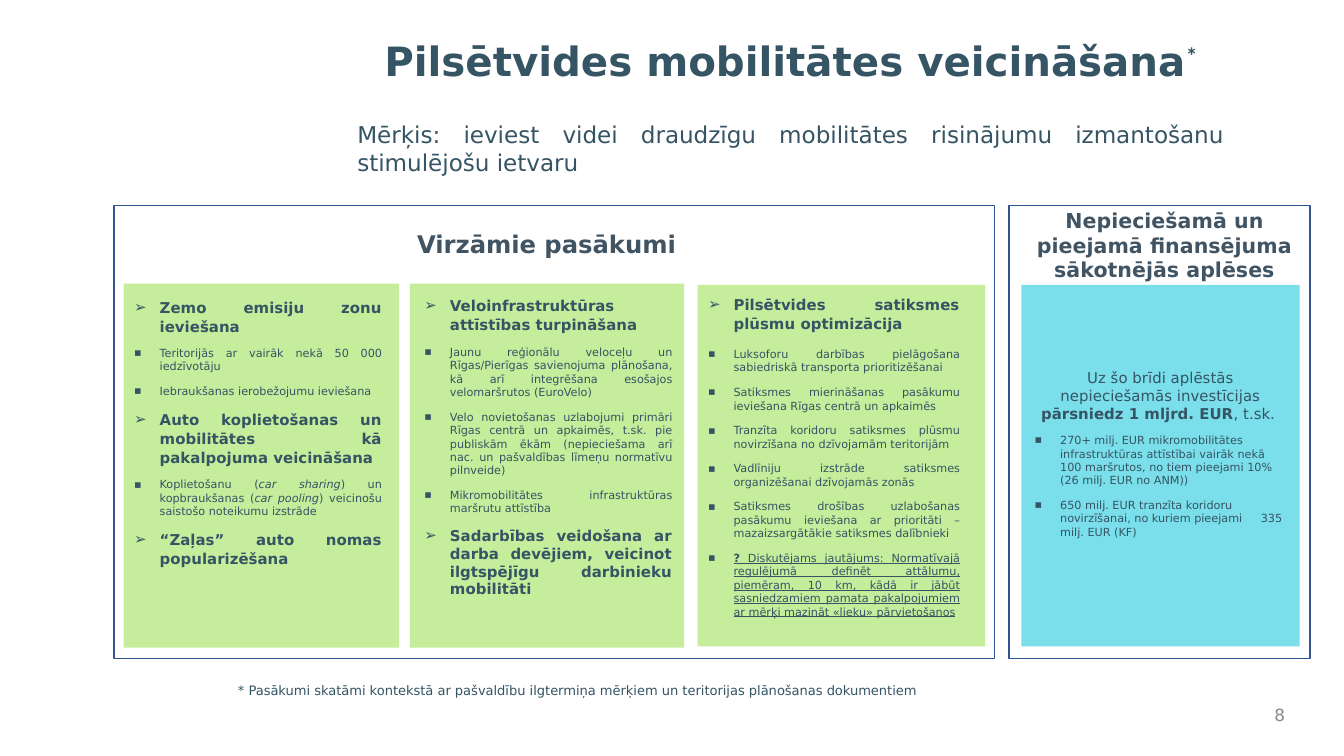
from dataclasses import dataclass

from lxml import etree
from pptx import Presentation
from pptx.dml.color import RGBColor
from pptx.enum import shapes, text
from pptx.oxml import ns
from pptx.util import Inches, Pt


@dataclass(frozen=True)
class Theme:
    """Colours, type sizes and font of the slide."""
    ink: str = "355464"
    label: str = "415463"
    frame: str = "325491"
    green: str = "C6ED9C"
    cyan: str = "7ADFEA"
    grey: str = "898989"
    font: str = "DejaVu Sans"
    title: float = 21.6
    band: float = 13
    goal: float = 12.4
    cost: float = 11
    page: float = 9
    head: float = 8
    note: float = 7
    item: float = 6


T = Theme()
A = text.PP_ALIGN
M = text.MSO_ANCHOR
HEAD = {"bullet": "➢", "size": T.head, "bold": True, "line_spacing": 1.07}
ITEM = {"bullet": "▪", "size": T.item}

ZONES = [
    (HEAD, "Zemo emisiju zonu ieviešana"),
    (ITEM, "Teritorijās ar vairāk nekā 50 000 iedzīvotāju"),
    (ITEM, "Iebraukšanas ierobežojumu ieviešana"),
    (HEAD, "Auto koplietošanas un mobilitātes kā pakalpojuma veicināšana"),
    (ITEM, "Koplietošanu (", ("car sharing", {"italic": True}), ") un kopbraukšanas (",
     ("car pooling", {"italic": True}), ") veicinošu saistošo noteikumu izstrāde"),
    (HEAD, "“Zaļas” auto nomas popularizēšana"),
]
BIKES = [
    (HEAD, "Veloinfrastruktūras attīstības turpināšana"),
    (ITEM, "Jaunu reģionālu veloceļu un Rīgas/Pierīgas savienojuma plānošana, "
           "kā arī integrēšana esošajos velomaršrutos (EuroVelo)"),
    (ITEM, "Velo novietošanas uzlabojumi primāri Rīgas centrā un apkaimēs, t.sk. pie publiskām "
           "ēkām (nepieciešama arī nac. un pašvaldības līmeņu normatīvu pilnveide)"),
    (ITEM, "Mikromobilitātes infrastruktūras maršrutu attīstība"),
    (HEAD | {"line_spacing": 1.0},
     "Sadarbības veidošana ar darba devējiem, veicinot ilgtspējīgu darbinieku mobilitāti"),
]
FLOWS = [
    (HEAD | {"after": 8}, "Pilsētvides satiksmes plūsmu optimizācija"),
    (ITEM, "Luksoforu darbības pielāgošana sabiedriskā transporta prioritizēšanai"),
    (ITEM, "Satiksmes mierināšanas pasākumu ieviešana Rīgas centrā un apkaimēs"),
    (ITEM, "Tranzīta koridoru satiksmes plūsmu novirzīšana no dzīvojamām teritorijām"),
    (ITEM, "Vadlīniju izstrāde satiksmes organizēšanai dzīvojamās zonās"),
    (ITEM, "Satiksmes drošības uzlabošanas pasākumu ieviešana ar prioritāti – "
           "mazaizsargātākie satiksmes dalībnieki"),
    (ITEM | {"underline": True}, ("?", {"bold": True}),
     " Diskutējams jautājums: Normatīvajā regulējumā definēt attālumu, piemēram, 10 km, kādā ir "
     "jābūt sasniedzamiem pamata pakalpojumiem ar mērķi mazināt «lieku» pārvietošanos"),
]
COSTS = [
    ({"size": T.head, "align": A.CENTER}, "Uz šo brīdi aplēstās nepieciešamās investīcijas ",
     ("pārsniedz 1 mljrd. EUR", {"bold": True}), ", t.sk. "),
    (ITEM, "270+ milj. EUR mikromobilitātes infrastruktūras attīstībai vairāk nekā "
           "100 maršrutos, no tiem pieejami 10% (26 milj. EUR no ANM))"),
    (ITEM | {"tab": 1.71},
     "650 milj. EUR tranzīta koridoru novirzīšanai, no kuriem pieejami\t335 milj. EUR (KF)"),
]
COLUMNS = [
    ((0.07, 0.58, 2.05, 2.71), (0.05, 0.63, 2.04, 2.12), ZONES),
    ((2.2, 0.58, 2.04, 2.71), (2.21, 0.62, 2.04, 2.56), BIKES),
    ((4.34, 0.59, 2.14, 2.69), (4.32, 0.61, 2.07, 2.64), FLOWS),
]


def shift(box, part):
    """Return the part's box moved by the corner of its region."""
    return box[0] + part[0], box[1] + part[1], part[2], part[3]


def style(font, form):
    """Apply a dict of format values to a font."""
    form = {"name": T.font, "color": T.ink, "bold": False} | form
    font.color.rgb = RGBColor.from_string(form.pop("color"))
    font.size = Pt(form.pop("size"))
    for key, val in form.items():
        setattr(font, key, val)


def mark(par, sign, tab):
    """Give a paragraph a hanging bullet and, if asked, a tab stop."""
    prop = par._p.get_or_add_pPr()
    prop.set("marL", str(Inches(0.19)))
    prop.set("indent", str(-Inches(0.19)))
    etree.SubElement(prop, ns.qn("a:buFont"), typeface=T.font)
    etree.SubElement(prop, ns.qn("a:buChar"), char=sign)
    if tab:
        stops = etree.SubElement(prop, ns.qn("a:tabLst"))
        etree.SubElement(stops, ns.qn("a:tab"), pos=str(Inches(tab)), algn="l")


def fill(frame, rows, align, anchor=M.TOP, after=0, right=0.1, low=0.05):
    """Write paragraphs of styled runs into a text frame."""
    frame.word_wrap = True
    frame.auto_size = text.MSO_AUTO_SIZE.NONE
    frame.vertical_anchor = anchor
    for side, gap in zip(("left", "top", "right", "bottom"), (0.1, 0.05, right, low)):
        setattr(frame, "margin_" + side, Inches(gap))
    for num, (form, *runs) in enumerate(rows):
        par = frame.add_paragraph() if num else frame.paragraphs[0]
        form = dict(form)
        sign, tab = form.pop("bullet", None), form.pop("tab", None)
        if sign:
            mark(par, sign, tab)
        par.alignment = form.pop("align", align)
        par.line_spacing = form.pop("line_spacing", 1.0)
        par.space_before = Pt(0)
        par.space_after = Pt(form.pop("after", after))
        for part in runs:
            word, more = (part, {}) if isinstance(part, str) else part
            run = par.add_run()
            run.text = word
            style(run.font, form | more)


def write(slide, box, rows, align, **form):
    """Add a text box holding the given paragraphs."""
    area = slide.shapes.add_textbox(*map(Inches, box))
    fill(area.text_frame, rows, align, **form)


def panel(slide, box, color=None):
    """Add a filled rectangle, or an outlined frame when no colour is given."""
    rect = slide.shapes.add_shape(shapes.MSO_SHAPE.RECTANGLE, *map(Inches, box))
    rect.shadow.inherit = False
    if color:
        rect.fill.solid()
        rect.fill.fore_color.rgb = RGBColor.from_string(color)
        rect.line.fill.background()
    else:
        rect.fill.background()
        rect.line.color.rgb = RGBColor.from_string(T.frame)
        rect.line.width = Pt(1)
    return rect


def top(slide, box):
    """Place the title and the goal line."""
    title = slide.shapes.title
    spot = shift(box, (0, 0, box[2], 0.87))
    for key, val in zip(("left", "top", "width", "height"), spot):
        setattr(title, key, Inches(val))
    fill(title.text_frame, [({"size": T.title, "bold": True},
                             "Pilsētvides mobilitātes veicināšana",
                             ("*", {"name": "Calibri"}))], A.CENTER)
    star = title.text_frame.paragraphs[0].runs[1]
    star._r.get_or_add_rPr().set("baseline", "30000")
    goal = "Mērķis: ieviest videi draudzīgu mobilitātes risinājumu izmantošanu stimulējošu ietvaru"
    write(slide, shift(box, (0.01, 0.63, 6.65, 0.44)), [({"size": T.goal}, goal)], A.JUSTIFY)


def plans(slide, box):
    """Place the frame with three columns of measures."""
    panel(slide, box)
    write(slide, shift(box, (1.92, 0.13, 2.59, 0.33)),
          [({"size": T.band, "bold": True, "color": T.label}, "Virzāmie pasākumi")], A.CENTER)
    for back, area, rows in COLUMNS:
        panel(slide, shift(box, back), T.green)
        write(slide, shift(box, area), rows, A.JUSTIFY, after=6)


def funds(slide, box):
    """Place the frame with the funding estimate."""
    panel(slide, box)
    card = panel(slide, shift(box, (0.09, 0.59, 2.07, 2.69)), T.cyan)
    fill(card.text_frame, COSTS, A.LEFT, M.MIDDLE, after=6, low=0.23)
    write(slide, shift(box, (0, -0.03, 2.31, 0.66)),
          [({"size": T.cost, "bold": True, "color": T.label},
            "Nepieciešamā un pieejamā finansējuma sākotnējās aplēses")], A.CENTER)


def foot(slide, box):
    """Place the footnote and the page number."""
    note = "* Pasākumi skatāmi kontekstā ar pašvaldību ilgtermiņa mērķiem un teritorijas plānošanas dokumentiem"
    write(slide, shift(box, (0, 0, 5.67, 0.39)), [({"size": T.note}, note)], A.RIGHT, right=0.14)
    write(slide, shift(box, (8.04, 0.16, 0.33, 0.25)),
          [({"size": T.page, "color": T.grey}, "8")], A.RIGHT, anchor=M.MIDDLE)


def main():
    """Build and save the slide."""
    deck = Presentation()
    deck.slide_width = Inches(10)
    deck.slide_height = deck.slide_width * 9 // 16
    slide = deck.slides.add_slide(deck.slide_layouts[5])
    top(slide, (2.55, 0.22, 6.67, 1.07))
    plans(slide, (0.85, 1.53, 6.55, 3.37))
    funds(slide, (7.51, 1.53, 2.24, 3.37))
    foot(slide, (1.29, 5.03, 8.37, 0.41))
    deck.save("out.pptx")


if __name__ == "__main__":
    main()
